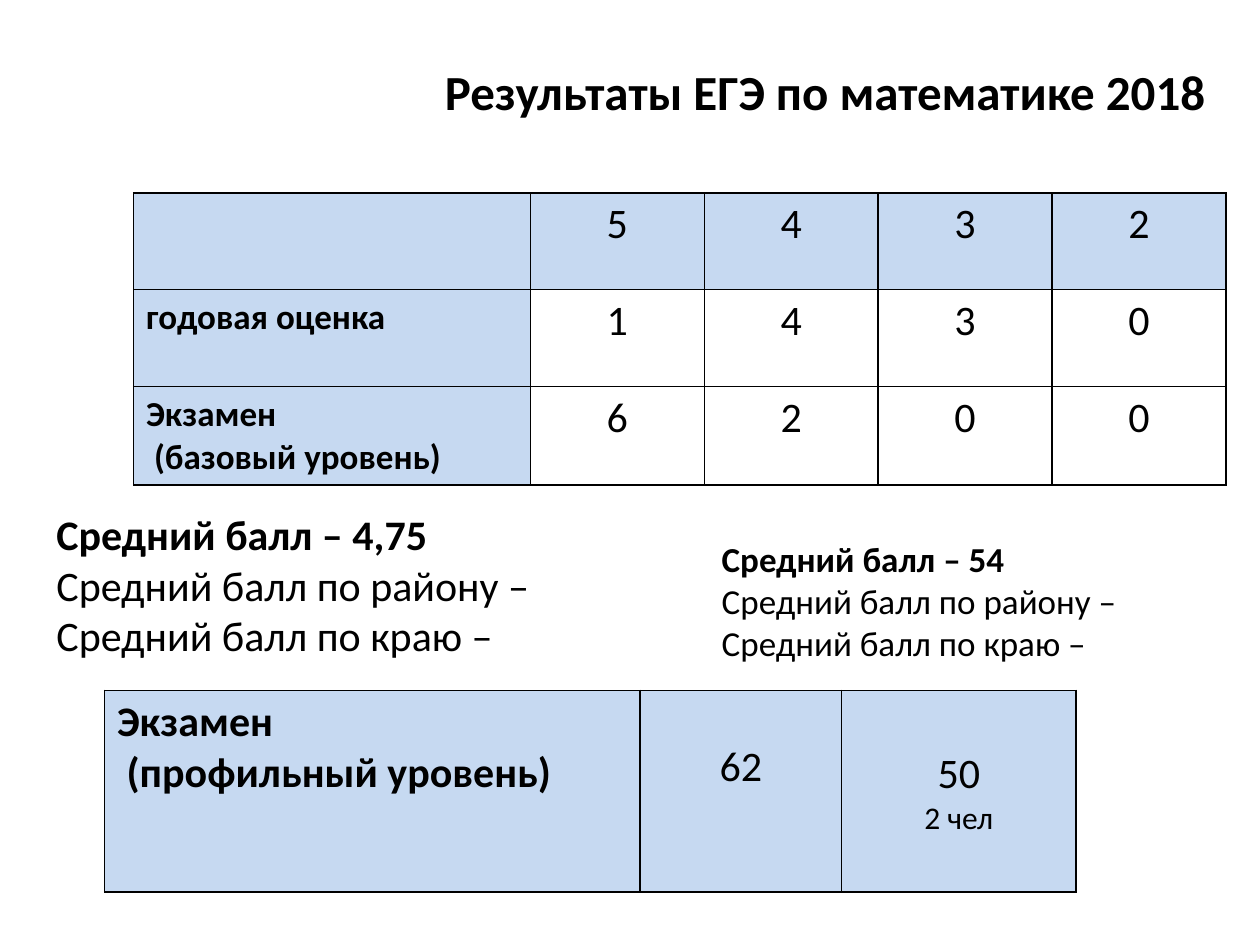
import pptx
import pptx.util
import pptx.dml.color
import pptx.enum.text
import pptx.oxml
import pptx.oxml.ns

Inches, Pt = pptx.util.Inches, pptx.util.Pt
Align = pptx.enum.text.PP_ALIGN
BLUE, BLACK = "C6D9F1", "000000"


def paint(color, value):
    color.rgb = pptx.dml.color.RGBColor.from_string(value)


def write(frame, lines, align=Align.LEFT):
    """Fill a text frame with (text, size, bold) lines."""
    for i, (text, size, bold) in enumerate(lines):
        para = frame.paragraphs[0] if i == 0 else frame.add_paragraph()
        para.alignment = align
        run = para.add_run()
        run.text = text
        style = {"name": "Calibri", "size": Pt(size), "bold": bold}
        for key, value in style.items():
            setattr(run.font, key, value)
        paint(run.font.color, BLACK)


deck = pptx.Presentation()
deck.slide_width, deck.slide_height = Inches(10), Inches(7.5)
slide = deck.slides.add_slide(deck.slide_layouts[5])
shapes = slide.shapes

# Title and average scores
score = ["Средний балл по району –", "Средний балл по краю –"]
notes = [
    (shapes.title, (3.43, 0.44, 6.31, 0.57),
     [("Результаты ЕГЭ по математике 2018", 28, True)]),
    (None, (0.35, 3.99, 4.2, 1.31),
     [("Средний балл – 4,75", 24, True)] + [(s, 24, False) for s in score]),
    (None, (5.63, 4.22, 3.53, 1.11),
     [("Средний балл – 54", 20, True)] + [(s, 20, False) for s in score]),
]
layout = {
    "word_wrap": False,
    "auto_size": pptx.enum.text.MSO_AUTO_SIZE.NONE,
    "vertical_anchor": pptx.enum.text.MSO_ANCHOR.TOP,
}
for box, place, lines in notes:
    spot = [Inches(n) for n in place]
    if box is None:
        box = shapes.add_textbox(*spot)
    else:
        box.left, box.top, box.width, box.height = spot
    for key, value in layout.items():
        setattr(box.text_frame, key, value)
    write(box.text_frame, lines)

# Table contents: each cell is a list of lines
base = [
    [[]] + [[(n, 24, False)] for n in "5432"],
    [[("годовая оценка", 20, True)]] + [[(n, 24, False)] for n in "1430"],
    [[("Экзамен", 20, True), (" (базовый уровень)", 20, True)]]
    + [[(n, 24, False)] for n in "6200"],
]
high = [[
    [("Экзамен", 24, True), (" (профильный уровень)", 24, True)],
    [("62", 24, False)],
    [("50", 24, False), ("2 чел", 18, False)],
]]

# Position, column widths, row height, top margins by column, rows
tables = [
    ((1.06, 1.53), [3.15] + [1.38] * 4, 0.77, [0.05] * 5, base),
    ((0.83, 5.48), [4.25, 1.6, 1.86], 1.6, [0.05, 0.41, 0.46], high),
]
border = (
    '<a:{0} {1} w="12700"><a:solidFill><a:srgbClr val="{2}"/>'
    "</a:solidFill></a:{0}>"
)
space = pptx.oxml.ns.nsdecls("a")

for (left, top), widths, height, gaps, rows in tables:
    grid = shapes.add_table(
        len(rows), len(widths), Inches(left), Inches(top),
        Inches(sum(widths)), Inches(height * len(rows))).table
    grid.first_row = grid.horz_banding = False
    for col, width in zip(grid.columns, widths):
        col.width = Inches(width)
    for r, row in enumerate(rows):
        grid.rows[r].height = Inches(height)
        for c, lines in enumerate(row):
            cell = grid.cell(r, c)
            cell.margin_top = Inches(gaps[c])
            write(cell.text_frame, lines, Align.CENTER if c else Align.LEFT)
            # Headings are blue, marks have no fill
            if r == 0 or c == 0:
                cell.fill.solid()
                paint(cell.fill.fore_color, BLUE)
            else:
                cell.fill.background()
            # Borders go before the fill
            props = cell._tc.get_or_add_tcPr()
            for i, side in enumerate(["lnL", "lnR", "lnT", "lnB"]):
                line = border.format(side, space, BLACK)
                props.insert(i, pptx.oxml.parse_xml(line))

deck.save("out.pptx")
